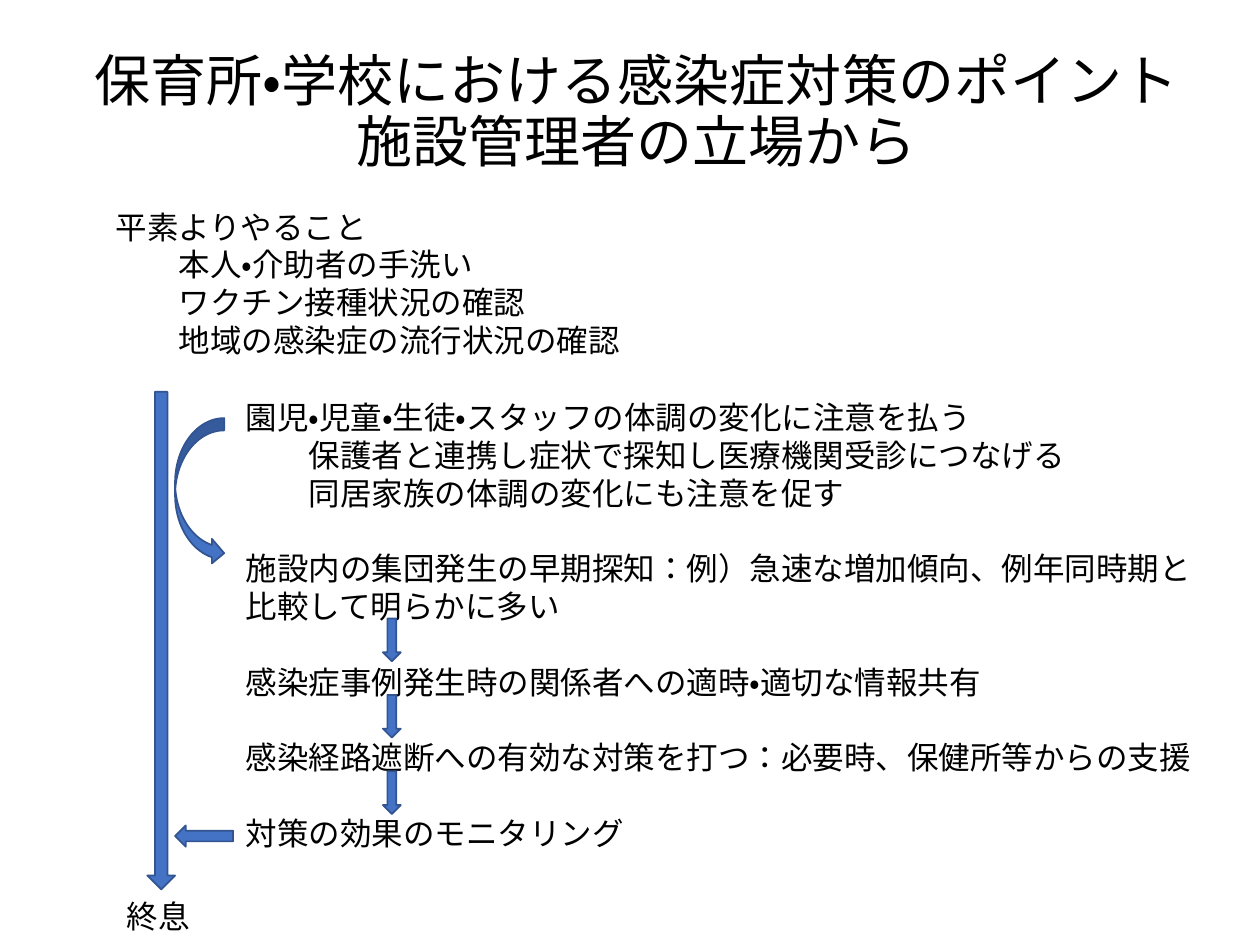
"""Build a slide on infection control points for nurseries and schools."""
from copy import deepcopy

from pptx import Presentation
from pptx import util as u
from pptx.dml.color import RGBColor
from pptx.enum import lang, shapes, text

FONT, BLACK, BLUE, NAVY = "Calibri", "000000", "4472C4", "325491"
LINE_GAP = 21.6

TITLE = ["保育所・学校における感染症対策のポイント", "施設管理者の立場から"]
TITLE_BOX = (0.84, 0.81, 24, 2.97)

# box, wrap, paragraphs as (level, blank line's worth of space before, wording)
TEXTS = [
    ((2.08, 4.06, 22.76, 3.33), True, [
        (0, False, "平素よりやること"),
        (1, False, "本人・介助者の手洗い"),
        (1, False, "ワクチン接種状況の確認"),
        (1, False, "地域の感染症の流行状況の確認"),
    ]),
    ((4.7, 7.9, 19.84, 9.5), True, [
        (0, False, "園児・児童・生徒・スタッフの体調の変化に注意を払う"),
        (1, False, "保護者と連携し症状で探知し医療機関受診につなげる"),
        (1, False, "同居家族の体調の変化にも注意を促す"),
        (0, True, "施設内の集団発生の早期探知：例）急速な増加傾向、例年同時期と比較して明らかに多い"),
        (0, True, "感染症事例発生時の関係者への適時・適切な情報共有"),
        (0, True, "感染経路遮断への有効な対策を打つ：必要時、保健所等からの支援"),
        (0, True, "対策の効果のモニタリング"),
    ]),
    ((2.31, 17.96, 1.8, 1.02), False, [(0, False, "終息")]),
]

STEP_TOP, STEP_PITCH, STEP_COUNT = 12.47, 1.54, 3
KIND = shapes.MSO_SHAPE
ARROWS = [
    (KIND.DOWN_ARROW, (2.97, 7.9, 0.56, 10.03), (0.45, 0.5)),
    (KIND.CURVED_RIGHT_ARROW, (3.53, 8.43, 0.99, 2.97), ()),
    (KIND.LEFT_ARROW, (3.53, 16.64, 1.17, 0.43), ()),
] + [
    (KIND.DOWN_ARROW, (7.72, STEP_TOP + i * STEP_PITCH, 0.36, 0.86), ())
    for i in range(STEP_COUNT)
]


def rgb(value):
    """Return the colour of a hex string."""
    return RGBColor.from_string(value)


def cm(box):
    """Return a box in centimetres as lengths."""
    return [u.Cm(v) for v in box]


def add_run(p, words, size):
    """Add one formatted run to a paragraph."""
    r = p.add_run()
    r.text = words
    r.font.name, r.font.size = FONT, u.Pt(size)
    r.font.color.rgb = rgb(BLACK)
    r.font.language_id = lang.MSO_LANGUAGE_ID.JAPANESE
    return r


def add_title(s):
    """Place the two-line title in its placeholder."""
    sp = s.shapes.title
    sp.left, sp.top, sp.width, sp.height = cm(TITLE_BOX)
    tf = sp.text_frame
    tf.auto_size = text.MSO_AUTO_SIZE.NONE
    tf.vertical_anchor = text.MSO_ANCHOR.MIDDLE
    p = tf.paragraphs[0]
    p.alignment, p.line_spacing = text.PP_ALIGN.CENTER, 0.9
    first = add_run(p, TITLE[0], 32)
    p.add_line_break()
    p._p[-1].append(deepcopy(first._r.rPr))
    add_run(p, TITLE[1], 32)


def add_text(s, box, wrap, paragraphs):
    """Add a text box with levelled paragraphs."""
    tf = s.shapes.add_textbox(*cm(box)).text_frame
    tf.word_wrap = wrap
    tf.auto_size = text.MSO_AUTO_SIZE.SHAPE_TO_FIT_TEXT
    for i, (level, gap, words) in enumerate(paragraphs):
        p = tf.add_paragraph() if i else tf.paragraphs[0]
        p.level = level
        if gap:
            p.space_before = u.Pt(LINE_GAP)
        add_run(p, words, 18)


def add_arrow(s, kind, box, adjustments):
    """Add a blue block arrow."""
    sp = s.shapes.add_shape(kind, *cm(box))
    sp.shadow.inherit = False
    sp.fill.solid()
    sp.fill.fore_color.rgb = rgb(BLUE)
    sp.line.color.rgb = rgb(NAVY)
    sp.line.width = u.Pt(1)
    for i, value in enumerate(adjustments):
        sp.adjustments[i] = value


def main():
    """Build and save the slide."""
    prs = Presentation()
    prs.slide_width, prs.slide_height = cm((25.4, 19.05))
    s = prs.slides.add_slide(prs.slide_layouts[5])
    add_title(s)
    for item in TEXTS:
        add_text(s, *item)
    for item in ARROWS:
        add_arrow(s, *item)
    prs.save("out.pptx")


if __name__ == "__main__":
    main()
